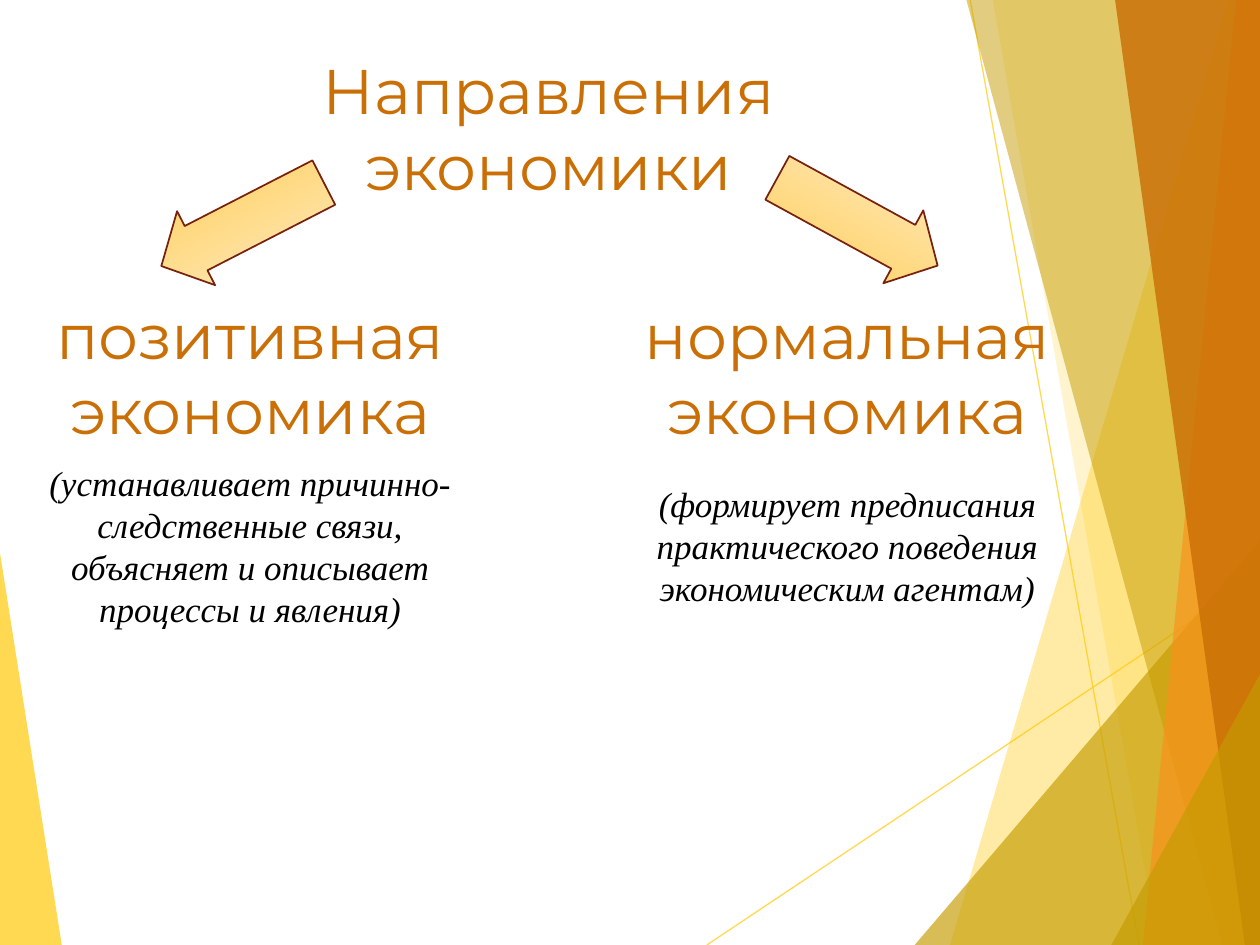
"""Build a slide on the two branches of economics."""
import lxml.etree
import pptx
import pptx.dml.color
import pptx.enum.shapes
import pptx.enum.text
import pptx.oxml.ns
import pptx.util

Inches = pptx.util.Inches
Pt = pptx.util.Pt
Rgb = pptx.dml.color.RGBColor.from_string
qn = pptx.oxml.ns.qn

THEME = {
    "gold": "FFCA08", "olive": "C59B00", "amber": "F8931D", "rust": "CA6F06",
    "ink": "000000", "edge": "77220E", "pale": "FFEDCB", "warm": "FFD05E",
    "head": {"font": "Montserrat", "size": 36, "color": "rust", "italic": False},
    "note": {"font": "Times New Roman", "size": 20, "color": "ink", "italic": True},
}
WIDE, HIGH = 10, 7.5

TEXTS = [
    (0, "head", "Направления\nэкономики", (2.35, 0.36, 4.01, 1.31)),
    (1, "head", "позитивная\nэкономика", (0.19, 2.3, 3.59, 1.31)),
    (3, "head", "нормальная\nэкономика", (4.88, 2.3, 3.69, 1.31)),
    (2, "note", "(устанавливает причинно-следственные связи, объясняет и описывает "
     "процессы и явления)", (0.19, 3.61, 3.59, 1.45)),
    (4, "note", "(формирует предписания практического поведения экономическим "
     "агентам)", (4.88, 3.78, 3.69, 1.11)),
]
ARROWS = [(1.2, 1.45, 152.8), (6.08, 1.43, 28.7)]
ARROW_SIZE = (1.45, 0.66)
LINES = [((5.61, HIGH), (WIDE, 4.57)), ((7.7, 0), (9.04, HIGH))]
LEFT_WEDGE = ([(0, 4.39), (0.49, HIGH), (0, HIGH)], "gold", 70)
RIGHT_WEDGES = [
    ((9.75, 0), (7.54, HIGH), "gold", 36),
    ((7.88, 0), (9.19, HIGH), "gold", 20),
    ((7.26, HIGH), (WIDE, 4.29), "olive", 66),
    ((7.67, 0), (9.7, HIGH), "olive", 50),
    ((9.81, 0), (9.07, HIGH), "amber", 70),
    ((8.85, 0), (9.88, HIGH), "rust", 82),
    ((8.82, HIGH), (WIDE, 5.35), "olive", 66),
]


def color(name):
    return Rgb(THEME[name])


def fade(shape, share):
    for node in list(shape.element.spPr.iter(qn("a:srgbClr"))):
        lxml.etree.SubElement(node, qn("a:alpha")).set("val", str(share * 1000))


def add_wedge(slide, points, fill, share):
    spots = [(Inches(x), Inches(y)) for x, y in points]
    pen = slide.shapes.build_freeform(*spots[0])
    pen.add_line_segments(spots[1:], close=True)
    wedge = pen.convert_to_shape()
    wedge.shadow.inherit = False
    wedge.fill.solid()
    wedge.fill.fore_color.rgb = color(fill)
    wedge.line.fill.background()
    fade(wedge, share)


def add_line(slide, start, end):
    ends = [Inches(v) for v in start + end]
    line = slide.shapes.add_connector(pptx.enum.shapes.MSO_CONNECTOR.STRAIGHT, *ends)
    line.line.color.rgb = color("gold")
    line.line.width = Pt(0.75)
    fade(line, 70)
    lxml.etree.SubElement(line.element.spPr, qn("a:effectLst"))


def add_text(slide, slot, role, words, box):
    style = THEME[role]
    holder = next(p for p in slide.placeholders if p.placeholder_format.idx == slot)
    slide.shapes._spTree.append(holder.element)
    holder.left, holder.top, holder.width, holder.height = map(Inches, box)
    frame = holder.text_frame
    frame.text = words
    frame.word_wrap = role == "note"
    frame.auto_size = pptx.enum.text.MSO_AUTO_SIZE.NONE
    frame.vertical_anchor = pptx.enum.text.MSO_ANCHOR.TOP
    for para in frame.paragraphs:
        para.alignment = pptx.enum.text.PP_ALIGN.CENTER
        para.line_spacing = 1.0
        para.space_before = para.space_after = Pt(0)
        props = para._p.get_or_add_pPr()
        props.set("marL", "0")
        props.set("indent", "0")
        lxml.etree.SubElement(props, qn("a:buNone"))
        for run in para.runs:
            font = run.font
            font.name, font.size = style["font"], Pt(style["size"])
            font.bold, font.italic = False, style["italic"]
            font.color.rgb = color(style["color"])


def add_arrow(slide, left, top, turn):
    kind = pptx.enum.shapes.MSO_SHAPE.RIGHT_ARROW
    arrow = slide.shapes.add_shape(kind, *map(Inches, (left, top, *ARROW_SIZE)))
    arrow.rotation = turn
    arrow.adjustments[0], arrow.adjustments[1] = 0.6, 0.47
    arrow.shadow.inherit = False
    arrow.fill.gradient()
    arrow.fill.gradient_angle = 270
    stops = zip(arrow.fill.gradient_stops, ("pale", "warm"), (0, 0.88))
    for stop, name, place in stops:
        stop.color.rgb = color(name)
        stop.position = place
    arrow.line.color.rgb = color("edge")
    arrow.line.width = Pt(1)


def main():
    deck = pptx.Presentation()
    deck.slide_width, deck.slide_height = Inches(WIDE), Inches(HIGH)
    slide = deck.slides.add_slide(deck.slide_layouts.get_by_name("Comparison"))
    add_wedge(slide, *LEFT_WEDGE)
    for start, end in LINES:
        add_line(slide, start, end)
    for first, second, fill, share in RIGHT_WEDGES:
        corners = [(WIDE, second[1]), (WIDE, first[1])]
        add_wedge(slide, [first, second, *corners], fill, share)
    for item in TEXTS:
        add_text(slide, *item)
    for item in ARROWS:
        add_arrow(slide, *item)
    deck.save("out.pptx")


if __name__ == "__main__":
    main()
